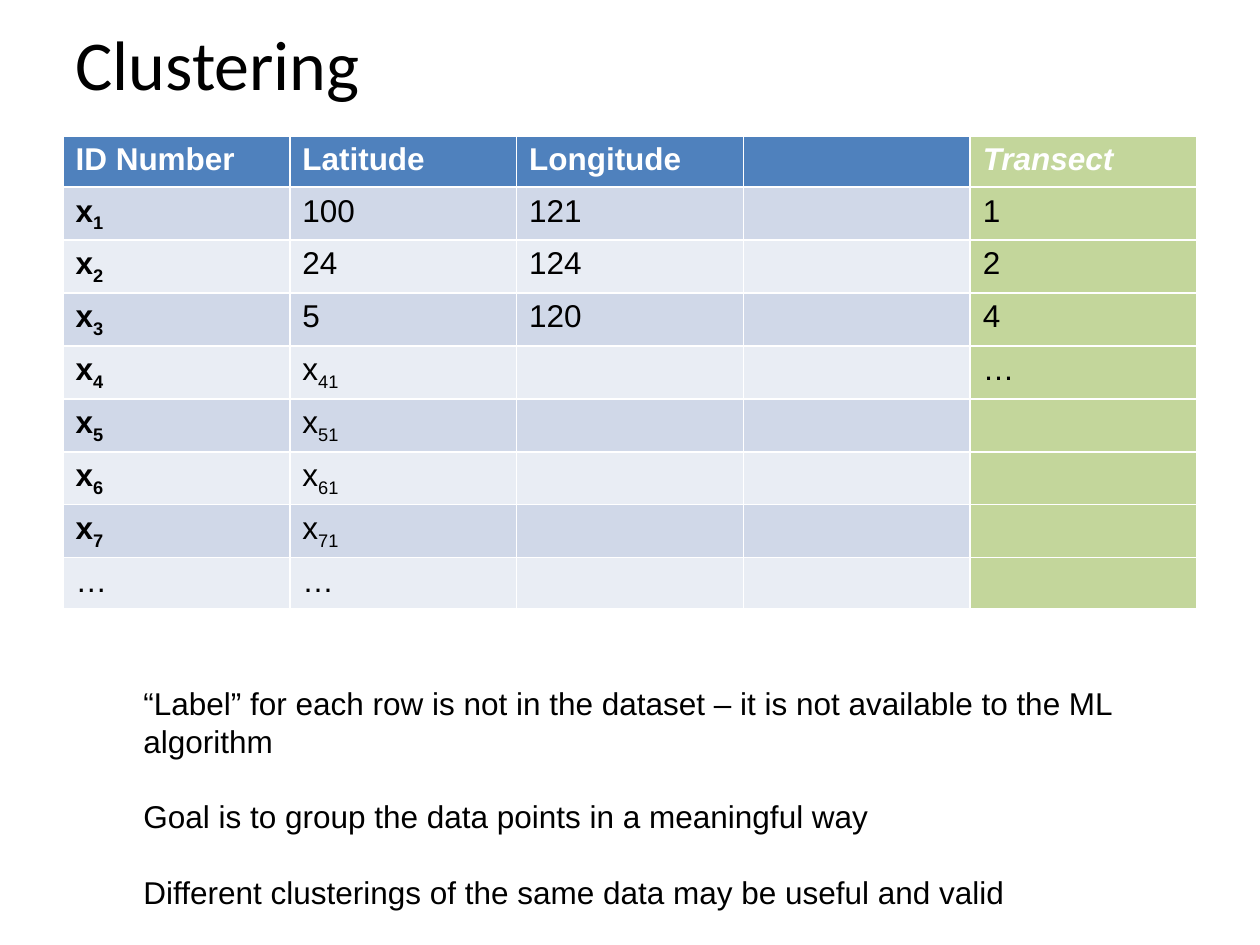
from pptx import Presentation
from pptx import util as u
from pptx.dml.color import RGBColor
from pptx.enum import text

COLORS = {
    "text": "000000",
    "header_text": "FFFFFF",
    "header": "4F81BD",
    "band_dark": "D0D8E8",
    "band_light": "E9EDF4",
    "label": "C3D69B",
}
HEADERS = ["ID Number", "Latitude", "Longitude", "", "Transect"]
# An underscore separates a symbol from its subscript
ROWS = [
    ["x_1", "100", "121", "", "1"],
    ["x_2", "24", "124", "", "2"],
    ["x_3", "5", "120", "", "4"],
    ["x_4", "x_41", "", "", "…"],
    *[[f"x_{i}", f"x_{i}1", "", "", ""] for i in (5, 6, 7)],
    ["…", "…", "", "", ""],
]
NOTES = [
    "“Label” for each row is not in the dataset – it is not available to the ML algorithm",
    "Goal is to group the data points in a meaningful way",
    "Different clusterings of the same data may be useful and valid",
]


class SlideBuilder:
    title_font = "Calibri"
    body_font = "Arial"
    body_size = 18

    def __init__(self, presentation):
        self.slide = presentation.slides.add_slide(presentation.slide_layouts[5])

    def style(self, run, font=None, size=None, color="text", bold=False, italic=False):
        run.font.name = font or self.body_font
        run.font.size = u.Pt(size or self.body_size)
        run.font.color.rgb = RGBColor.from_string(COLORS[color])
        run.font.bold = bold
        run.font.italic = italic

    def title(self, wording, left, top, width, height):
        shape = self.slide.shapes.title
        shape.left, shape.top = u.Inches(left), u.Inches(top)
        shape.width, shape.height = u.Inches(width), u.Inches(height)
        frame = shape.text_frame
        frame.text = wording
        frame.vertical_anchor = text.MSO_ANCHOR.MIDDLE
        paragraph = frame.paragraphs[0]
        paragraph.alignment = text.PP_ALIGN.LEFT
        self.style(paragraph.runs[0], self.title_font, 40)

    def cell(self, cell, wording, fill, **style):
        cell.fill.solid()
        cell.fill.fore_color.rgb = RGBColor.from_string(COLORS[fill])
        if not wording:
            return
        paragraph = cell.text_frame.paragraphs[0]
        for index, part in enumerate(wording.split("_")):
            run = paragraph.add_run()
            run.text = part
            self.style(run, **style)
            if index:
                run.font._element.set("baseline", "-25000")

    def table(self, headers, rows, left, top, width, height):
        table = self.slide.shapes.add_table(
            len(rows) + 1, len(headers),
            u.Inches(left), u.Inches(top), u.Inches(width), u.Inches(height),
        ).table
        last = len(headers) - 1
        for column, wording in enumerate(headers):
            self.cell(table.cell(0, column), wording,
                      "label" if column == last else "header",
                      color="header_text", bold=True, italic=column == last)
        for row, values in enumerate(rows, start=1):
            band = "band_dark" if row % 2 else "band_light"
            for column, wording in enumerate(values):
                self.cell(table.cell(row, column), wording,
                          "label" if column == last else band,
                          bold=column == 0 and "_" in wording)

    def text_box(self, wordings, left, top, width, height, gap):
        frame = self.slide.shapes.add_textbox(
            u.Inches(left), u.Inches(top), u.Inches(width), u.Inches(height)
        ).text_frame
        frame.word_wrap = True
        frame.auto_size = text.MSO_AUTO_SIZE.SHAPE_TO_FIT_TEXT
        frame.text = "\n".join(wordings)
        for paragraph in frame.paragraphs:
            self.style(paragraph.runs[0])
        for paragraph in frame.paragraphs[:-1]:
            paragraph.space_after = u.Pt(gap)


def main():
    presentation = Presentation()
    presentation.slide_width = u.Inches(10)
    presentation.slide_height = u.Inches(7.5)
    builder = SlideBuilder(presentation)

    # Title
    builder.title("Clustering", 0.5, 0, 9, 1)

    # Data points with their hidden label column
    builder.table(HEADERS, ROWS, 0.5, 1.08, 9, 3.65)

    # Remarks, one blank line's height apart
    builder.text_box(NOTES, 1.04, 5.38, 8.21, 1.92, gap=21.5)

    presentation.save("out.pptx")


if __name__ == "__main__":
    main()
